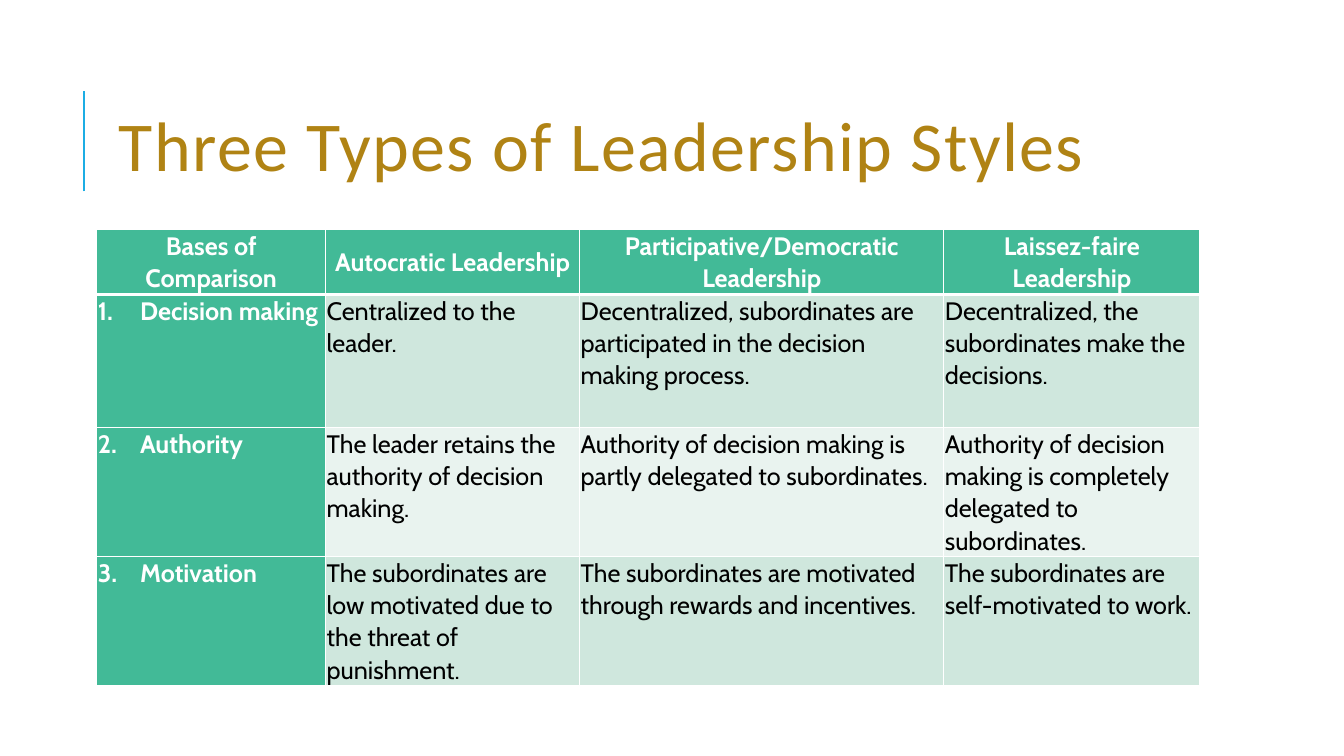
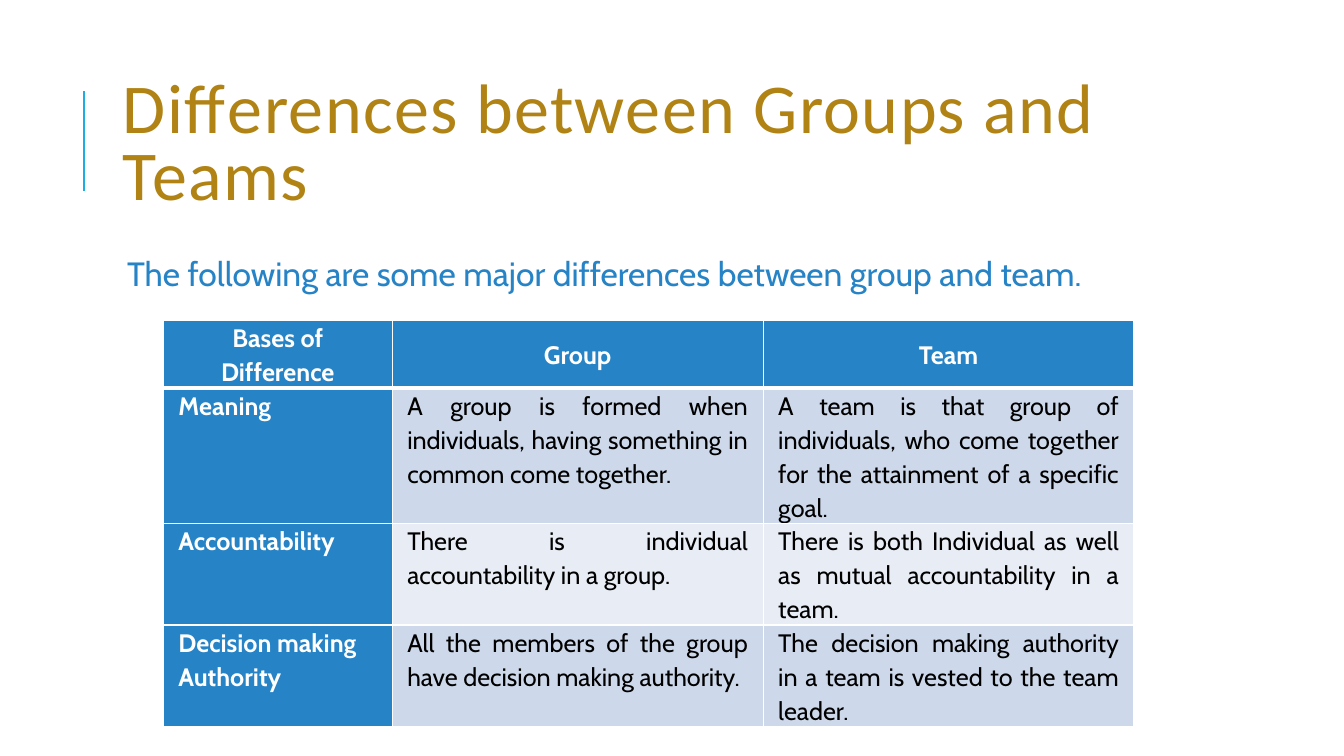
from dataclasses import dataclass

from lxml import etree
from pptx import Presentation
from pptx import util as u
from pptx.dml.color import RGBColor
from pptx.enum import shapes, text
from pptx.oxml import ns

WHITE = RGBColor(0xFF, 0xFF, 0xFF)
BLACK = RGBColor(0x00, 0x00, 0x00)
GOLD = RGBColor(0xB0, 0x83, 0x14)
SKY = RGBColor(0x1C, 0xAD, 0xE4)
BLUE = RGBColor(0x26, 0x83, 0xC6)
BLUE_BANDS = (RGBColor(0xCD, 0xD9, 0xEA), RGBColor(0xE8, 0xED, 0xF5))
GREEN = RGBColor(0x42, 0xBA, 0x97)
GREEN_BANDS = (RGBColor(0xCF, 0xE7, 0xDD), RGBColor(0xE9, 0xF3, 0xEF))

TITLE_FONT = "Calibri"
BODY_FONT = "Cabin"
SLIDE_WIDTH = u.Inches(13.33)
SLIDE_HEIGHT = u.Inches(7.5)
TITLE_ONLY, TITLE_AND_CONTENT = 5, 1

LEADERSHIP_ROWS = [
    ["Bases of Comparison", "Autocratic Leadership",
     "Participative/Democratic Leadership", "Laissez-faire Leadership"],
    ["Decision making", "Centralized to the leader.",
     "Decentralized, subordinates are participated in the decision making process.",
     "Decentralized, the subordinates make the decisions."],
    ["Authority", "The leader retains the authority of decision making.",
     "Authority of decision making is partly delegated to subordinates.",
     "Authority of decision making is completely delegated to subordinates."],
    ["Motivation", "The subordinates are low motivated due to the threat of punishment.",
     "The subordinates are motivated through rewards and incentives.",
     "The subordinates are self-motivated to work."],
]
DIFFERENCE_ROWS = [
    ["Bases of Difference", "Group", "Team"],
    ["Meaning",
     "A group is formed when individuals, having something in common come together.",
     "A team is that group of individuals, who come together for the attainment "
     "of a specific goal."],
    ["Accountability", "There is individual accountability in a group.",
     "There is both Individual as well as mutual accountability in a team."],
    ["Decision making Authority",
     "All the members of the group have decision making authority.",
     "The decision making authority in a team is vested to the team leader."],
]


@dataclass
class TableStyle:
    accent: RGBColor
    bands: tuple
    side_margin: float
    line_spacing: float
    space_after: int
    body_alignment: text.PP_ALIGN
    numbered: bool = False


GREEN_TABLE = TableStyle(GREEN, GREEN_BANDS, 0.01, 1.05, 1,
                         text.PP_ALIGN.LEFT, numbered=True)
BLUE_TABLE = TableStyle(BLUE, BLUE_BANDS, 0.15, 1.1, 2, text.PP_ALIGN.JUSTIFY)


def across(percent):
    """Length as a percentage of the slide's width."""
    return u.Emu(round(SLIDE_WIDTH * percent / 100))


def down(percent):
    """Length as a percentage of the slide's height."""
    return u.Emu(round(SLIDE_HEIGHT * percent / 100))


def add_run(paragraph, words, font, size, color, bold=False):
    run = paragraph.add_run()
    run.text = words
    run.font.name = font
    run.font.size = u.Pt(size)
    run.font.color.rgb = color
    run.font.bold = bold
    return run


def place(shape, left, top, width, height):
    shape.left, shape.top = across(left), down(top)
    shape.width, shape.height = across(width), down(height)


# Slide frame: accent line and title
def add_framed_slide(presentation, layout, title, left, top):
    slide = presentation.slides.add_slide(presentation.slide_layouts[layout])
    accent = slide.shapes.add_connector(
        shapes.MSO_CONNECTOR.STRAIGHT,
        across(6.25), down(25.33), across(6.25), down(12))
    accent.line.color.rgb = SKY
    accent.line.width = u.Pt(1.5)
    etree.SubElement(accent._element.spPr, ns.qn("a:effectLst"))

    place(slide.shapes.title, left, top, 79.75, 21.87)
    frame = slide.shapes.title.text_frame
    frame.auto_size = text.MSO_AUTO_SIZE.NONE
    frame.vertical_anchor = text.MSO_ANCHOR.MIDDLE
    paragraph = frame.paragraphs[0]
    paragraph.alignment = text.PP_ALIGN.LEFT
    paragraph.line_spacing = 0.8
    run = add_run(paragraph, title, TITLE_FONT, 50, GOLD)
    run.font._element.set("spc", "100")
    return slide


def fill_body(body, words):
    place(body, 8.4, 33.33, 79.75, 58.67)
    frame = body.text_frame
    frame.auto_size = text.MSO_AUTO_SIZE.NONE
    frame.margin_left = frame.margin_right = u.Inches(0.05)
    frame.margin_top = frame.margin_bottom = u.Inches(0.05)
    paragraph = frame.paragraphs[0]
    properties = paragraph._p.get_or_add_pPr()
    properties.set("marL", str(u.Inches(0.09)))
    properties.set("indent", "0")
    etree.SubElement(properties, ns.qn("a:buNone"))
    paragraph.alignment = text.PP_ALIGN.JUSTIFY
    paragraph.line_spacing = 0.9
    paragraph.space_before = u.Pt(0)
    add_run(paragraph, words, BODY_FONT, 24, BLUE)


# Table parts
def set_borders(cell, row):
    top = 3 if row == 1 else 1
    bottom = 3 if row == 0 else 1
    properties = cell._tc.get_or_add_tcPr()
    edges = (("lnL", 1), ("lnR", 1), ("lnT", top), ("lnB", bottom))
    for position, (edge, points) in enumerate(edges):
        line = etree.Element(ns.qn(f"a:{edge}"), w=str(u.Pt(points)))
        fill = etree.SubElement(line, ns.qn("a:solidFill"))
        etree.SubElement(fill, ns.qn("a:srgbClr"), val=str(WHITE))
        properties.insert(position, line)


def number_paragraph(paragraph, number):
    properties = paragraph._p.get_or_add_pPr()
    properties.set("marL", str(u.Inches(0.42)))
    properties.set("indent", str(-u.Inches(0.42)))
    etree.SubElement(properties, ns.qn("a:buAutoNum"),
                     type="arabicPeriod", startAt=str(number))


def fill_cell(cell, words, row, column, style):
    is_header = row == 0
    is_label = is_header or column == 0
    cell.fill.solid()
    cell.fill.fore_color.rgb = style.accent if is_label else style.bands[(row - 1) % 2]
    set_borders(cell, row)
    cell.margin_left = cell.margin_right = u.Inches(style.side_margin)
    cell.margin_top = cell.margin_bottom = 0
    cell.vertical_anchor = text.MSO_ANCHOR.MIDDLE if is_header else text.MSO_ANCHOR.TOP

    paragraph = cell.text_frame.paragraphs[0]
    if style.numbered and column == 0 and not is_header:
        number_paragraph(paragraph, row)
    if is_header:
        paragraph.alignment = text.PP_ALIGN.CENTER
    else:
        paragraph.alignment = text.PP_ALIGN.LEFT if is_label else style.body_alignment
    paragraph.line_spacing = style.line_spacing
    paragraph.space_after = u.Pt(style.space_after)
    add_run(paragraph, words, BODY_FONT, 18, WHITE if is_label else BLACK, is_label)


def add_comparison(slide, rows, left, top, widths, heights, style):
    table = slide.shapes.add_table(
        len(rows), len(widths), across(left), down(top),
        across(sum(widths)), down(sum(heights))).table
    for column, width in zip(table.columns, widths):
        column.width = across(width)
    for row, height in zip(table.rows, heights):
        row.height = down(height)
    for row, entries in enumerate(rows):
        for column, words in enumerate(entries):
            fill_cell(table.cell(row, column), words, row, column, style)


def main():
    presentation = Presentation()
    presentation.slide_width = SLIDE_WIDTH
    presentation.slide_height = SLIDE_HEIGHT

    # Leadership styles
    slide = add_framed_slide(presentation, TITLE_ONLY,
                             "Three Types of Leadership Styles", 8.1, 9.1)
    add_comparison(slide, LEADERSHIP_ROWS, 7.2, 30.4,
                   (17.03, 18.9, 27.1, 19.05), (8.4, 17.6, 17.07, 17.07), GREEN_TABLE)

    # Groups and teams
    slide = add_framed_slide(presentation, TITLE_AND_CONTENT,
                             "Differences between Groups and Teams", 8.4, 8.53)
    fill_body(slide.placeholders[1],
              "The following are some major differences between group and team.")
    add_comparison(slide, DIFFERENCE_ROWS, 12.15, 42.4,
                   (17.03, 27.6, 27.6), (8.8, 17.73, 13.2, 13.2), BLUE_TABLE)

    presentation.save("out.pptx")


if __name__ == "__main__":
    main()
